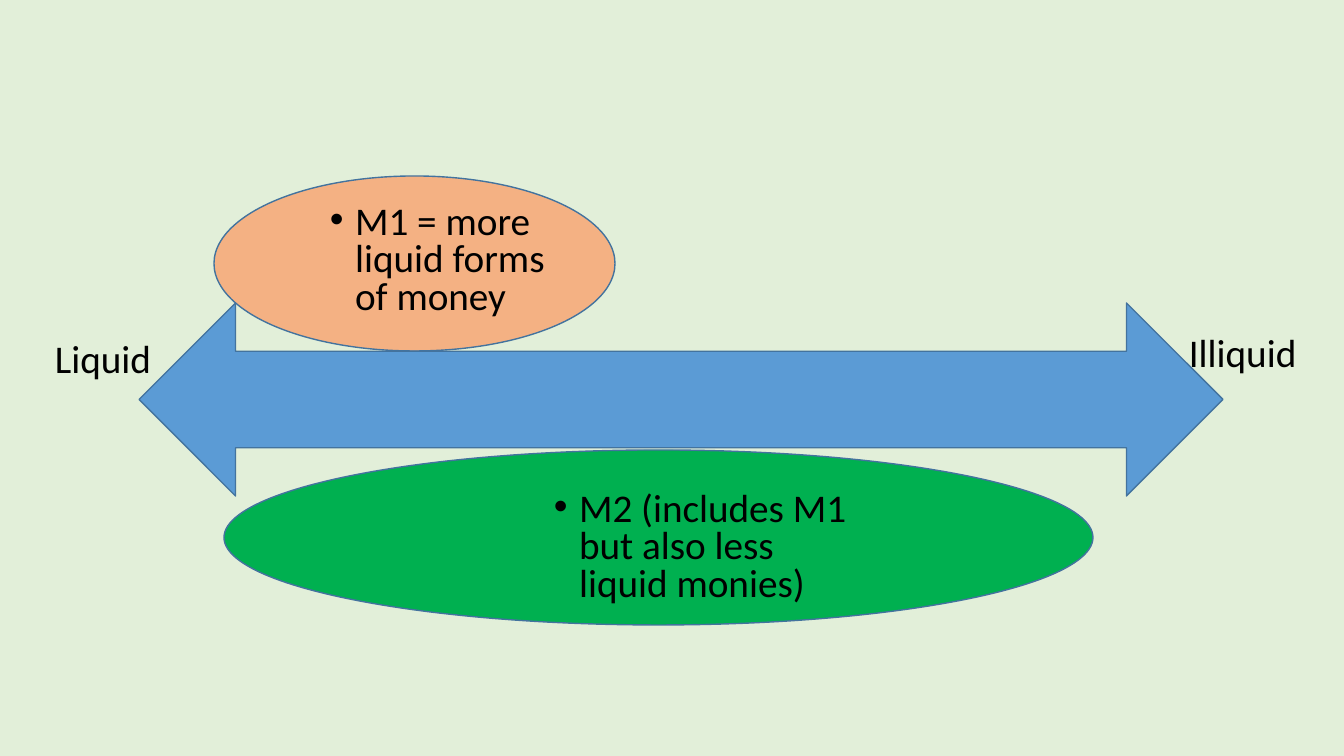
from pptx import Presentation
from pptx.dml.color import RGBColor
from pptx.enum.shapes import MSO_SHAPE
from pptx.oxml.ns import qn
from pptx.util import Emu, Pt
from lxml.etree import SubElement

PX = 914400 / 100.8
BACKGROUND = RGBColor(0xE2, 0xEF, 0xD9)
GREEN = RGBColor(0x00, 0xB0, 0x50)
ORANGE = RGBColor(0xF4, 0xB1, 0x83)
BLUE = RGBColor(0x5B, 0x9B, 0xD5)
OUTLINE = RGBColor(0x43, 0x73, 0x9E)
BLACK = RGBColor(0, 0, 0)


def px(*lengths):
    return [Emu(round(length * PX)) for length in lengths]


def add_text(box, wording, bulleted=False):
    frame = slide.shapes.add_textbox(*px(*box)).text_frame
    frame.word_wrap = True
    paragraph = frame.paragraphs[0]
    paragraph.text = wording
    if bulleted:
        paragraph.line_spacing = 0.8
        properties = paragraph._p.get_or_add_pPr()
        properties.set("marL", "228600")
        properties.set("indent", "-228600")
        SubElement(properties, qn("a:buFont")).set("typeface", "Arial")
        SubElement(properties, qn("a:buChar")).set("char", "•")
    paragraph.font.name = "Calibri"
    paragraph.font.size = Pt(28)
    paragraph.font.color.rgb = BLACK


presentation = Presentation()
presentation.slide_width, presentation.slide_height = px(1344, 756)
slide = presentation.slides.add_slide(presentation.slide_layouts[6])
slide.background.fill.solid()
slide.background.fill.fore_color.rgb = BACKGROUND

# Money groups above and below the liquidity arrow
for outline, box, color in [
    (MSO_SHAPE.OVAL, (224, 450, 869, 175), GREEN),
    (MSO_SHAPE.OVAL, (214, 176, 401, 175), ORANGE),
    (MSO_SHAPE.LEFT_RIGHT_ARROW, (139, 303, 1084, 193), BLUE),
]:
    part = slide.shapes.add_shape(outline, *px(*box))
    part.shadow.inherit = False
    part.fill.solid()
    part.fill.fore_color.rgb = color
    part.line.color.rgb = OUTLINE
    part.line.width = Pt(1)

# Descriptions of the two groups
add_text((320, 200, 258, 133), "M1 = more liquid forms of money", bulleted=True)
add_text((544, 487, 332, 133), "M2 (includes M1 but also less liquid monies)", bulleted=True)

# Ends of the liquidity scale
add_text((45, 329, 228, 57), "Liquid")
add_text((1179, 323, 165, 57), "Illiquid")

presentation.save("out.pptx")
